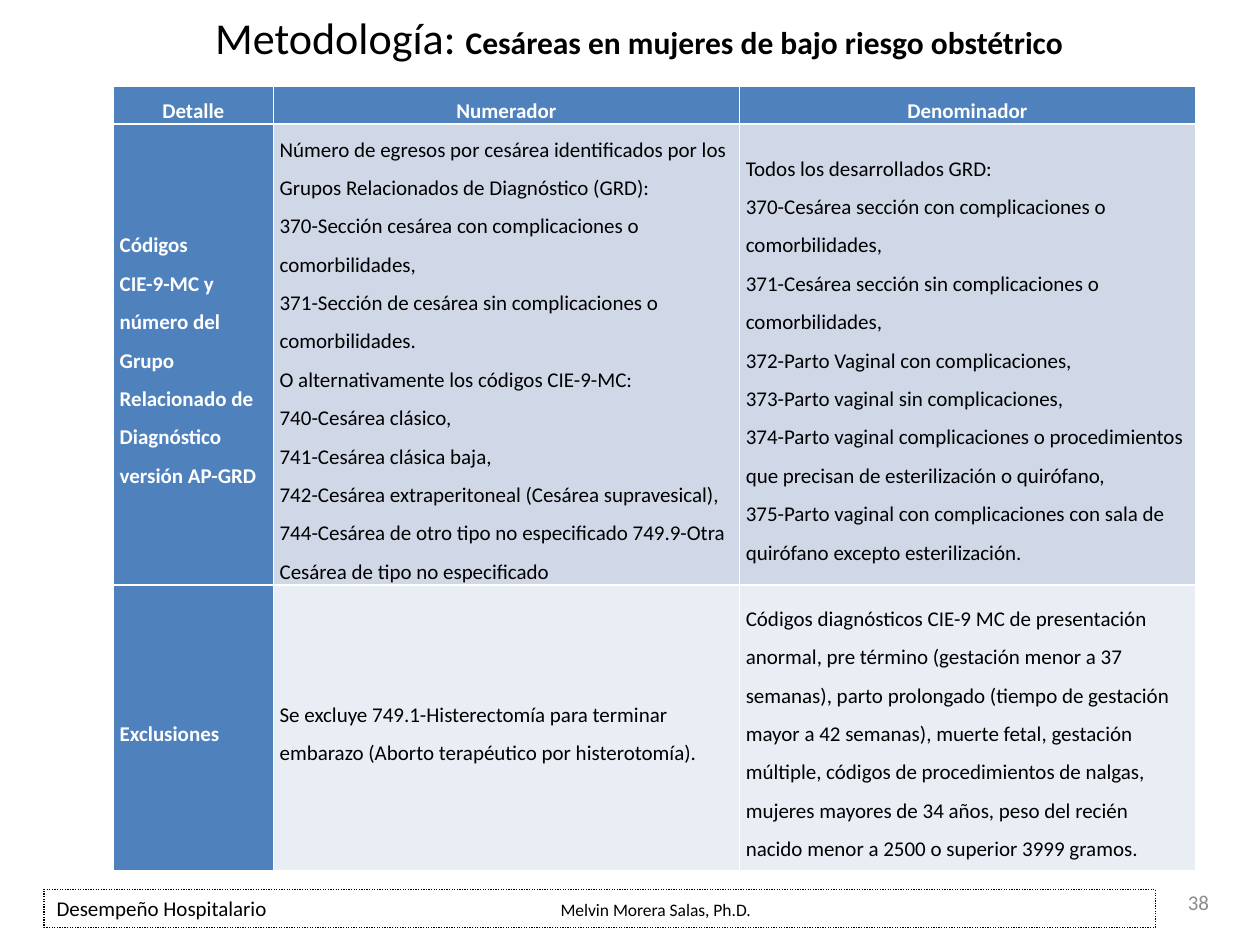
from lxml.etree import SubElement
from pptx import Presentation
from pptx.dml.color import RGBColor
from pptx.enum.dml import MSO_LINE as Dash
from pptx.enum.shapes import MSO_SHAPE as Shape
from pptx.enum.text import MSO_ANCHOR as Anchor, MSO_AUTO_SIZE as Fit, PP_ALIGN as Align
from pptx.oxml.ns import qn
from pptx.util import Pt

BLACK = RGBColor(0x00, 0x00, 0x00)
WHITE = RGBColor(0xFF, 0xFF, 0xFF)
GRAY = RGBColor(0x8C, 0x8C, 0x8C)
BLUE = RGBColor(0x4F, 0x81, 0xBD)
BANDS = [RGBColor(0xD0, 0xD8, 0xE8), RGBColor(0xE9, 0xED, 0xF4)]


def style(font, size, color=BLACK, bold=False):
    form = {"name": "Calibri", "size": Pt(size), "bold": bold}
    for key, val in form.items():
        setattr(font, key, val)
    font.color.rgb = color


def add_run(par, text, size, color=BLACK, bold=False):
    run = par.add_run()
    run.text = text
    style(run.font, size, color, bold)


deck = Presentation()
deck.slide_width, deck.slide_height = Pt(720), Pt(540)
slide = deck.slides.add_slide(deck.slide_layouts[5])

# Title
title = slide.shapes.title
place = {"left": 82, "top": 3.6, "width": 566.6, "height": 34.6}
for key, val in place.items():
    setattr(title, key, Pt(val))
frame = title.text_frame
frame.auto_size = Fit.NONE
frame.vertical_anchor = Anchor.MIDDLE
par = frame.paragraphs[0]
par.alignment = Align.CENTER
add_run(par, "Metodología: ", 25.2)
add_run(par, "Cesáreas en mujeres de bajo riesgo obstétrico", 18, bold=True)

# Table text: one list per row, one string per cell, one line per paragraph
ROWS = [
    ["Detalle", "Numerador", "Denominador"],
    [
        "Códigos\vCIE-9-MC y número del Grupo Relacionado de Diagnóstico versión AP-GRD",
        "Número de egresos por cesárea identificados por los Grupos Relacionados "
        "de Diagnóstico (GRD):\n"
        "370-Sección cesárea con complicaciones o comorbilidades,\n"
        "371-Sección de cesárea sin complicaciones o comorbilidades.\v"
        "O alternativamente los códigos CIE-9-MC:\n"
        "740-Cesárea clásico,\n"
        "741-Cesárea clásica baja,\n"
        "742-Cesárea extraperitoneal (Cesárea supravesical),\n"
        "744-Cesárea de otro tipo no especificado 749.9-Otra Cesárea de tipo "
        "no especificado",
        "Todos los desarrollados GRD:\n"
        "370-Cesárea sección con complicaciones o comorbilidades,\n"
        "371-Cesárea sección sin complicaciones o comorbilidades,\n"
        "372-Parto Vaginal con complicaciones,\n"
        "373-Parto vaginal sin complicaciones,\n"
        "374-Parto vaginal complicaciones o procedimientos que precisan de "
        "esterilización o quirófano,\n"
        "375-Parto vaginal con complicaciones con sala de quirófano excepto "
        "esterilización.",
    ],
    [
        "Exclusiones",
        "Se excluye 749.1-Histerectomía para terminar embarazo (Aborto "
        "terapéutico por histerotomía).",
        "Códigos diagnósticos CIE-9 MC de presentación anormal, pre término "
        "(gestación menor a 37 semanas), parto prolongado (tiempo de gestación "
        "mayor a 42 semanas), muerte fetal, gestación múltiple, códigos de "
        "procedimientos de nalgas, mujeres mayores de 34 años, peso del recién "
        "nacido menor a 2500 o superior 3999 gramos.",
    ],
]
WIDTHS = [91.4, 266.4, 260.6]
HEIGHTS = [16.6, 262, 163.4]

# Table: the default style draws the white rules
table = slide.shapes.add_table(
    3, 3, Pt(64.8), Pt(49), Pt(sum(WIDTHS)), Pt(sum(HEIGHTS))).table
table.first_col = True
for col, width in zip(table.columns, WIDTHS):
    col.width = Pt(width)
for row, height in zip(table.rows, HEIGHTS):
    row.height = Pt(height)

margins = {"margin_left": 3.6, "margin_right": 3.6, "margin_top": 0, "margin_bottom": 0}
for r, texts in enumerate(ROWS):
    for c, text in enumerate(texts):
        cell = table.cell(r, c)
        head = r == 0 or c == 0
        for key, val in margins.items():
            setattr(cell, key, Pt(val))
        cell.fill.solid()
        cell.fill.fore_color.rgb = BLUE if head else BANDS[r - 1]
        if r:
            cell.vertical_anchor = Anchor.MIDDLE
        else:
            cell.vertical_anchor = Anchor.BOTTOM if c else Anchor.TOP
        cell.text = text
        for par in cell.text_frame.paragraphs:
            par.line_spacing = 1.5
            par.alignment = Align.LEFT if r else Align.CENTER
            for run in par.runs:
                style(run.font, 12, WHITE if head else BLACK, head)

# Footer box, with a tab stop before the author
foot = slide.shapes.add_shape(Shape.RECTANGLE, Pt(25.2), Pt(508.3), Pt(635), Pt(21.6))
foot.shadow.inherit = False
foot.fill.background()
foot.line.color.rgb = BLACK
foot.line.width = Pt(0.75)
foot.line.dash_style = Dash.ROUND_DOT
foot.text_frame.vertical_anchor = Anchor.TOP
par = foot.text_frame.paragraphs[0]
par.alignment = Align.LEFT
tabs = SubElement(par._p.get_or_add_pPr(), qn("a:tabLst"))
SubElement(tabs, qn("a:tab"), pos=str(Pt(288)), algn="l")
add_run(par, "Desempeño Hospitalario\t", 12)
add_run(par, "Melvin Morera Salas, Ph.D.", 10)

# Page number
page = slide.shapes.add_textbox(Pt(530), Pt(501), Pt(168), Pt(28.8)).text_frame
page.word_wrap = True
page.vertical_anchor = Anchor.MIDDLE
par = page.paragraphs[0]
par.alignment = Align.RIGHT
add_run(par, "38", 12, GRAY)

deck.save("out.pptx")
